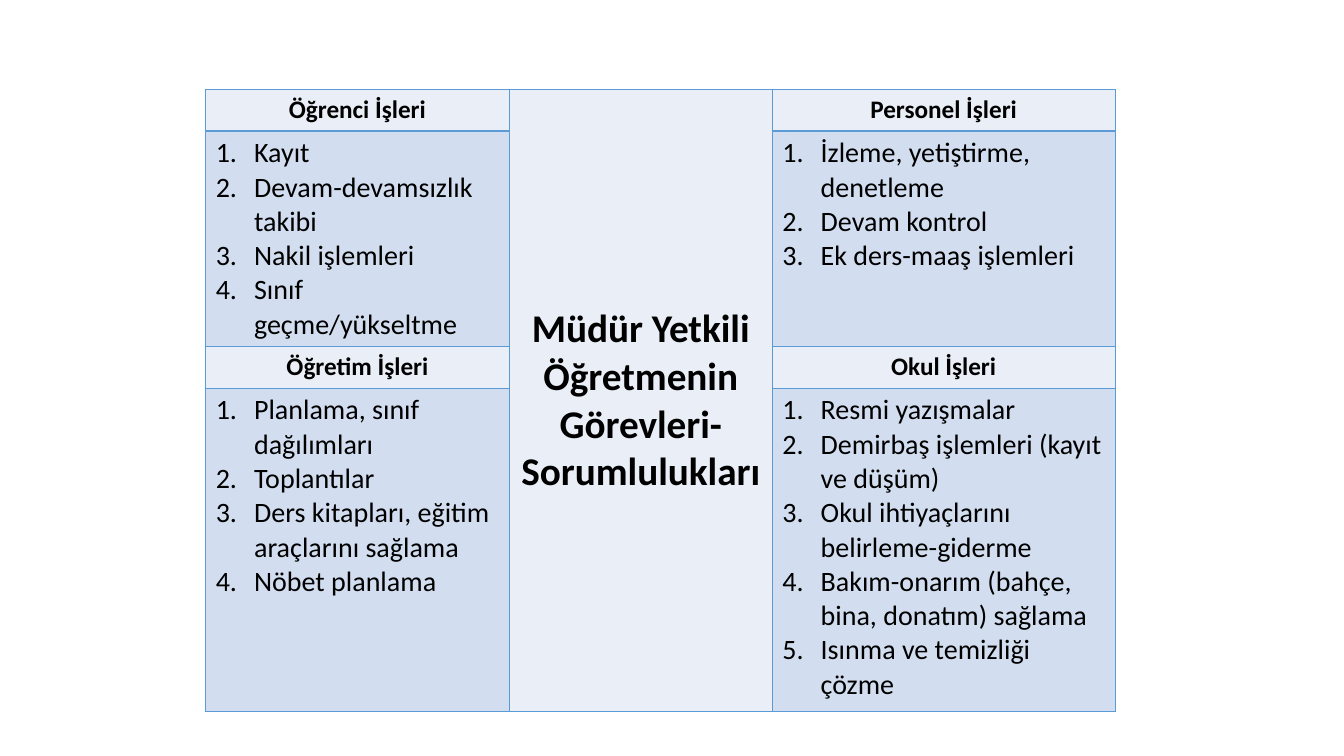
"""Build a slide with a table of the duties of a head teacher."""
from lxml.etree import SubElement
from pptx import Presentation
from pptx.dml.color import RGBColor
from pptx.enum.text import MSO_ANCHOR, PP_ALIGN
from pptx.oxml import parse_xml
from pptx.oxml.ns import nsdecls, qn
from pptx.util import Inches, Pt

CENTER_TITLE = "Müdür Yetkili Öğretmenin Görevleri-Sorumlulukları"
DUTIES = {
    (0, 0): ("Öğrenci İşleri", [
        "Kayıt",
        "Devam-devamsızlık takibi",
        "Nakil işlemleri",
        "Sınıf geçme/yükseltme",
    ]),
    (0, 2): ("Personel İşleri", [
        "İzleme, yetiştirme, denetleme",
        "Devam kontrol",
        "Ek ders-maaş işlemleri",
    ]),
    (2, 0): ("Öğretim İşleri", [
        "Planlama, sınıf dağılımları",
        "Toplantılar",
        "Ders kitapları, eğitim araçlarını sağlama",
        "Nöbet planlama",
    ]),
    (2, 2): ("Okul İşleri", [
        "Resmi yazışmalar",
        "Demirbaş işlemleri (kayıt ve düşüm)",
        "Okul ihtiyaçlarını belirleme-giderme",
        "Bakım-onarım (bahçe, bina, donatım) sağlama",
        "Isınma ve temizliği çözme",
    ]),
}

COLUMNS = (3.01, 2.61, 3.4)
ROWS = (0.41, 1.96, 0.41, 3.21)
LEFT, TOP = 2.04, 0.89
INDENT = Inches(0.38)
FONT = "Calibri"
BLACK = RGBColor(0x00, 0x00, 0x00)
HEADER_FILL = RGBColor(0xEA, 0xEF, 0xF7)
LIST_FILL = RGBColor(0xD2, 0xDE, 0xEF)
BORDER = RGBColor(0x5B, 0x9B, 0xD5)


def add_borders(cell):
    """Draw a thin line on all four sides of a cell."""
    properties = cell._tc.get_or_add_tcPr()
    for position, side in enumerate(("lnL", "lnR", "lnT", "lnB")):
        properties.insert(position, parse_xml(
            f'<a:{side} {nsdecls("a")} w="{Pt(1)}"><a:solidFill>'
            f'<a:srgbClr val="{BORDER}"/></a:solidFill></a:{side}>'))


def fill_cell(cell, lines, size, fill, numbered=False):
    """Write the lines as a bold heading or as a numbered list."""
    cell.fill.solid()
    cell.fill.fore_color.rgb = fill
    for index, line in enumerate(lines):
        frame = cell.text_frame
        para = frame.add_paragraph() if index else frame.paragraphs[0]
        if numbered:
            properties = para._p.get_or_add_pPr()
            properties.set("marL", str(INDENT))
            properties.set("indent", str(-INDENT))
            SubElement(properties, qn("a:buFont"), typeface="+mj-lt")
            SubElement(properties, qn("a:buAutoNum"), type="arabicPeriod")
        else:
            para.alignment = PP_ALIGN.CENTER
        span = para.add_run()
        span.text = line
        span.font.name = FONT
        span.font.size = Pt(size)
        span.font.bold = not numbered
        span.font.color.rgb = BLACK


def main():
    """Lay out the table and save the deck."""
    deck = Presentation()
    deck.slide_width, deck.slide_height = Inches(13.33), Inches(7.5)
    page = deck.slides.add_slide(deck.slide_layouts[6])
    table = page.shapes.add_table(
        len(ROWS), len(COLUMNS), Inches(LEFT), Inches(TOP),
        Inches(sum(COLUMNS)), Inches(sum(ROWS))).table
    for column, width in zip(table.columns, COLUMNS):
        column.width = Inches(width)
    for row, height in zip(table.rows, ROWS):
        row.height = Inches(height)

    center = table.cell(0, 1)
    center.merge(table.cell(len(ROWS) - 1, 1))
    center.vertical_anchor = MSO_ANCHOR.MIDDLE
    fill_cell(center, [CENTER_TITLE], 28, HEADER_FILL)
    for (row, column), (heading, items) in DUTIES.items():
        fill_cell(table.cell(row, column), [heading], 18, HEADER_FILL)
        fill_cell(table.cell(row + 1, column), items, 20, LIST_FILL, numbered=True)
    for cell in table.iter_cells():
        add_borders(cell)
    deck.save("out.pptx")


if __name__ == "__main__":
    main()
